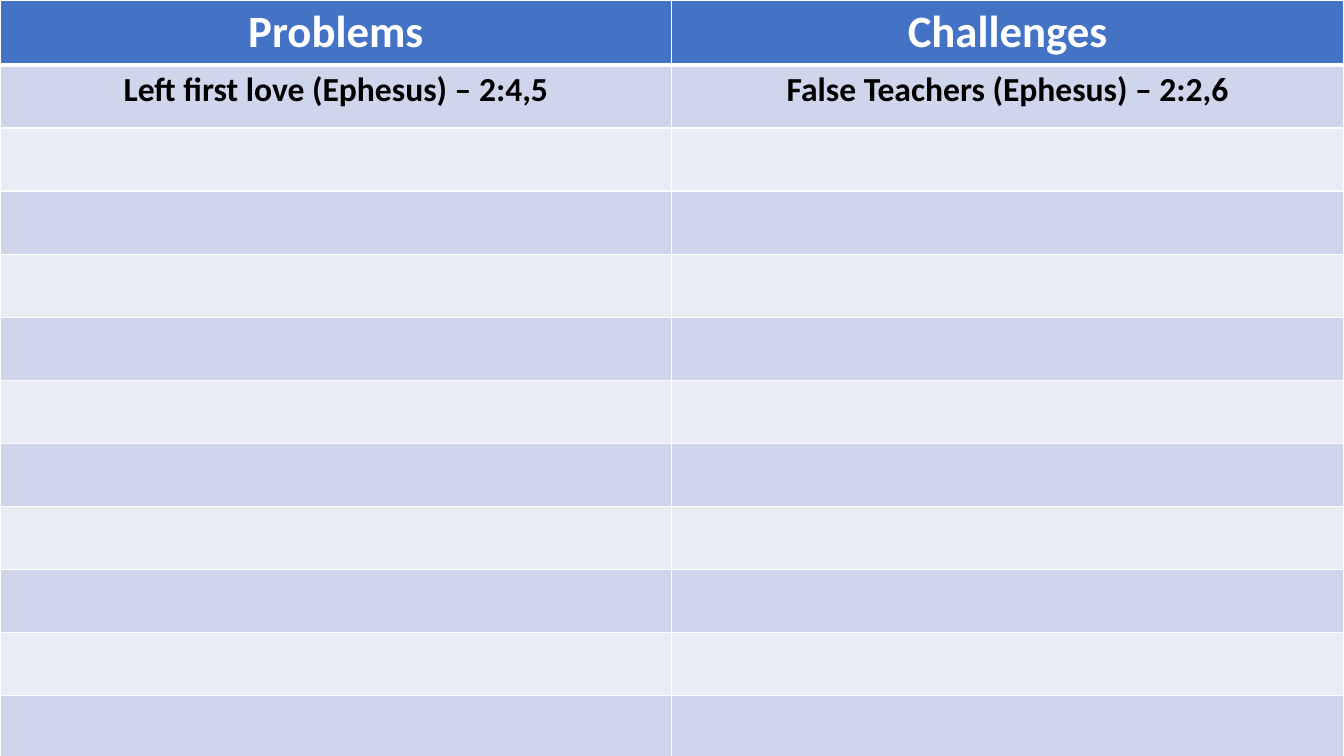
"""Build a slide with a two-column table of problems and challenges."""
from lxml.etree import SubElement
from pptx import Presentation
from pptx.dml.color import RGBColor
from pptx.enum.text import PP_ALIGN as Align
from pptx.oxml.ns import qn
from pptx.util import Cm, Pt

COLORS = {
    "header": "4472C4",
    "dark band": "CFD5EA",
    "light band": "E9EBF5",
    "white": "FFFFFF",
    "black": "000000",
}
ENTRIES = [
    ("Problems", "Challenges"),
    ("Left first love (Ephesus) – 2:4,5", "False Teachers (Ephesus) – 2:2,6"),
]
ROW_COUNT = 12
COLUMN_WIDTH = Cm(16.93)
ROW_HEIGHT = Cm(1.59)


def add_border(cell, side, points):
    """Draw a white line on one side of a cell."""
    line = SubElement(cell._tc.get_or_add_tcPr(), qn(f"a:{side}"), w=str(Pt(points)))
    fill = SubElement(line, qn("a:solidFill"))
    SubElement(fill, qn("a:srgbClr"), val=COLORS["white"])


deck = Presentation()
deck.slide_width = Cm(33.87)
deck.slide_height = Cm(19.05)
slide = deck.slides.add_slide(deck.slide_layouts[6])

comparison = slide.shapes.add_table(
    ROW_COUNT, 2, 0, 0, 2 * COLUMN_WIDTH, ROW_COUNT * ROW_HEIGHT
).table
for column in comparison.columns:
    column.width = COLUMN_WIDTH

for row_index, row in enumerate(comparison.rows):
    row.height = ROW_HEIGHT
    is_header = row_index == 0
    band = "header" if is_header else "dark band" if row_index % 2 else "light band"
    for column_index, cell in enumerate(row.cells):
        add_border(cell, "lnL", 1)
        add_border(cell, "lnR", 1)
        add_border(cell, "lnT", 3 if row_index == 1 else 1)
        add_border(cell, "lnB", 3 if is_header else 1)
        cell.fill.solid()
        cell.fill.fore_color.rgb = RGBColor.from_string(COLORS[band])
        if row_index < len(ENTRIES):
            paragraph = cell.text_frame.paragraphs[0]
            paragraph.alignment = Align.CENTER
            entry = paragraph.add_run()
            entry.text = ENTRIES[row_index][column_index]
            entry.font.name = "Calibri"
            entry.font.size = Pt(32 if is_header else 24)
            entry.font.bold = True
            text_color = COLORS["white" if is_header else "black"]
            entry.font.color.rgb = RGBColor.from_string(text_color)

deck.save("out.pptx")
